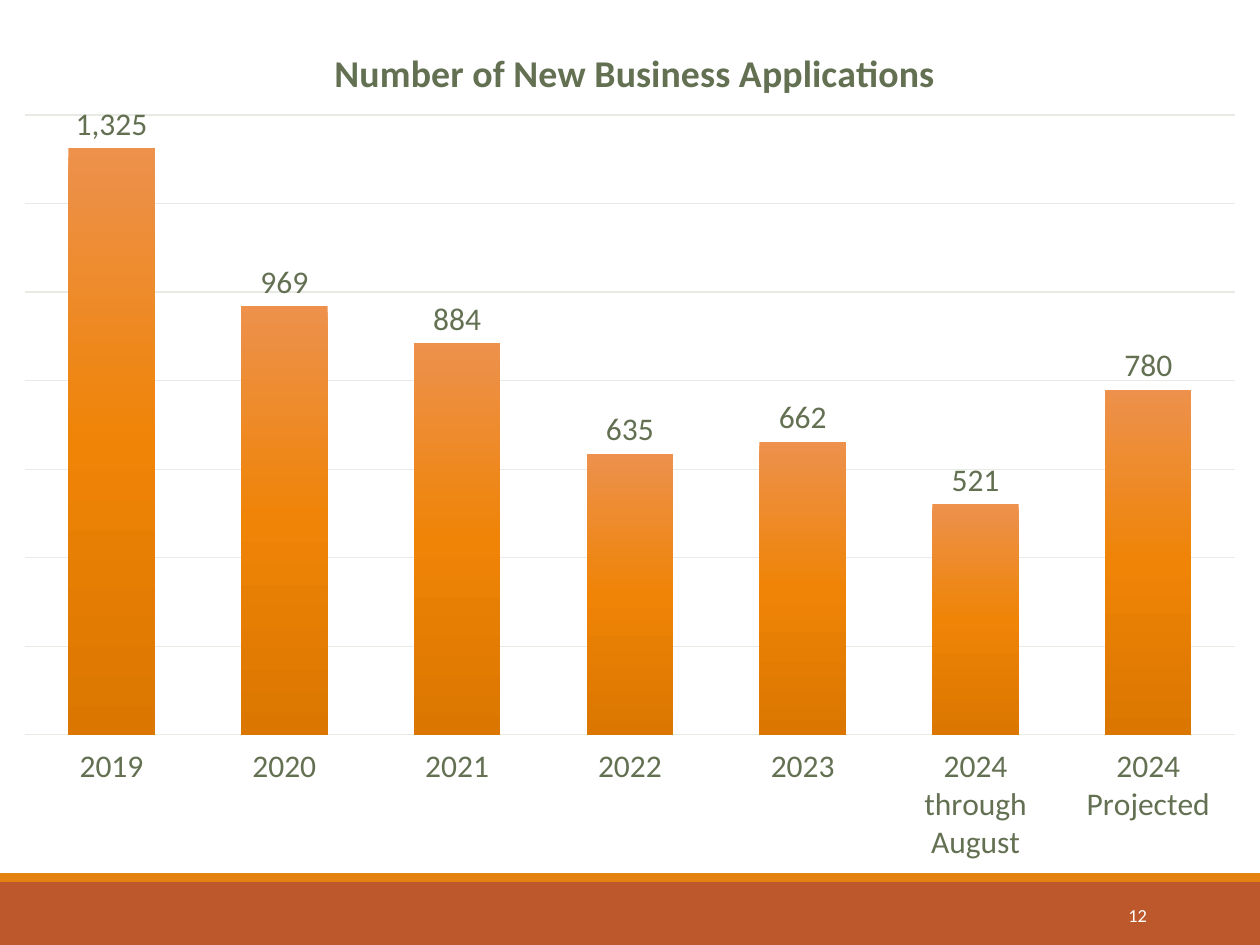
"""Build a slide with a column chart of new business applications per year."""
from pptx import Presentation
from pptx.chart.data import CategoryChartData
from pptx.dml.color import RGBColor
from pptx.enum.chart import XL_CHART_TYPE, XL_LABEL_POSITION, XL_TICK_LABEL_POSITION, XL_TICK_MARK
from pptx.enum.shapes import MSO_SHAPE
from pptx.enum.text import MSO_ANCHOR, PP_ALIGN
from pptx.oxml import parse_xml
from pptx.oxml.ns import nsdecls
from pptx.util import Inches, Pt

COLORS = {
    "rust": "BD582C", "orange": "E48312", "white": "FFFFFF", "olive": "637052",
    "grid": "E8EBE4", "bar_top": "ED914C", "bar_middle": "EF8407", "bar_bottom": "DB7600",
}
APPLICATIONS = {
    "2019": 1325, "2020": 969, "2021": 884, "2022": 635, "2023": 662,
    "2024 through August": 521, "2024 Projected": 780,
}


def style_font(font, size, color, bold=False):
    font.name = "Calibri"
    font.size = Pt(size)
    font.bold = bold
    font.color.rgb = RGBColor.from_string(COLORS[color])


def manual_layout(target, **fractions):
    settings = {"xMode": "edge", "yMode": "edge", **fractions}
    if target:
        settings = {"layoutTarget": target, **settings}
    fields = "".join(f'<c:{name} val="{value}"/>' for name, value in settings.items())
    return parse_xml(f'<c:layout {nsdecls("c")}><c:manualLayout>{fields}</c:manualLayout></c:layout>')


deck = Presentation()
deck.slide_width, deck.slide_height = Inches(10), Inches(7.5)
page = deck.slides.add_slide(deck.slide_layouts[6])

for top, height, color in [(7, 0.5, "rust"), (6.93, 0.07, "orange")]:
    band = page.shapes.add_shape(MSO_SHAPE.RECTANGLE, 0, Inches(top), Inches(10), Inches(height))
    band.shadow.inherit = False
    band.fill.solid()
    band.fill.fore_color.rgb = RGBColor.from_string(COLORS[color])
    band.line.fill.background()

number_box = page.shapes.add_textbox(Inches(8.12), Inches(7.06), Inches(1.08), Inches(0.4))
number_box.text_frame.word_wrap = True
number_box.text_frame.vertical_anchor = MSO_ANCHOR.MIDDLE
para = number_box.text_frame.paragraphs[0]
para.alignment = PP_ALIGN.RIGHT
span = para.add_run()
span.text = "12"
style_font(span.font, 10.5, "white")

chart_data = CategoryChartData(number_format="#,##0")
chart_data.categories = list(APPLICATIONS)
chart_data.add_series("Series 1", list(APPLICATIONS.values()))
chart = page.shapes.add_chart(
    XL_CHART_TYPE.COLUMN_CLUSTERED, 0, Inches(0.04), Inches(10), Inches(6.88), chart_data
).chart
style_font(chart.font, 18, "olive")
chart.has_legend = False
chart.has_title = True
title_para = chart.chart_title.text_frame.paragraphs[0]
title_span = title_para.add_run()
title_span.text = "Number of New Business Applications"
style_font(title_span.font, 21.6, "olive", bold=True)
chart.chart_title.include_in_layout = False

title_xml = chart._chartSpace.chart.find("{*}title")
plot_xml = chart._chartSpace.chart.plotArea
for parent in (title_xml, plot_xml):
    for layout in parent.findall("{*}layout"):
        parent.remove(layout)
title_xml.find("{*}tx").addnext(manual_layout(None, x=0.26, y=0.04))
plot_xml.insert(0, manual_layout("inner", x=0.02, y=0.127, w=0.96, h=0.715))

years = chart.category_axis
years.major_tick_mark = years.minor_tick_mark = XL_TICK_MARK.NONE
years.tick_label_position = XL_TICK_LABEL_POSITION.LOW
style_font(years.tick_labels.font, 18, "olive")

counts = chart.value_axis
counts.visible = False
counts.minimum_scale, counts.maximum_scale, counts.major_unit = 0, 1400, 200
counts.has_major_gridlines = True
for line in (years.format.line, counts.major_gridlines.format.line):
    line.color.rgb = RGBColor.from_string(COLORS["grid"])
    line.width = Pt(0.75)

plot = chart.plots[0]
plot.vary_by_categories = False
plot.gap_width, plot.overlap = 100, -24
plot.has_data_labels = True
labels = plot.data_labels
labels.show_value = True
labels.position = XL_LABEL_POSITION.OUTSIDE_END
labels.number_format, labels.number_format_is_linked = "#,##0", False
style_font(labels.font, 18, "olive")

bar_format = plot.series[0].format
bar_format.fill.gradient()
bar_format.fill.gradient_angle = 270
stops = "".join(
    f'<a:gs pos="{position * 1000}"><a:srgbClr val="{COLORS[color]}"/></a:gs>'
    for position, color in [(0, "bar_top"), (50, "bar_middle"), (100, "bar_bottom")]
)
gradient_list = plot.series[0]._element.find(".//{*}gsLst")
gradient_list.getparent().replace(
    gradient_list, parse_xml(f'<a:gsLst {nsdecls("a")}>{stops}</a:gsLst>')
)
bar_format.line.fill.background()

deck.save("out.pptx")
